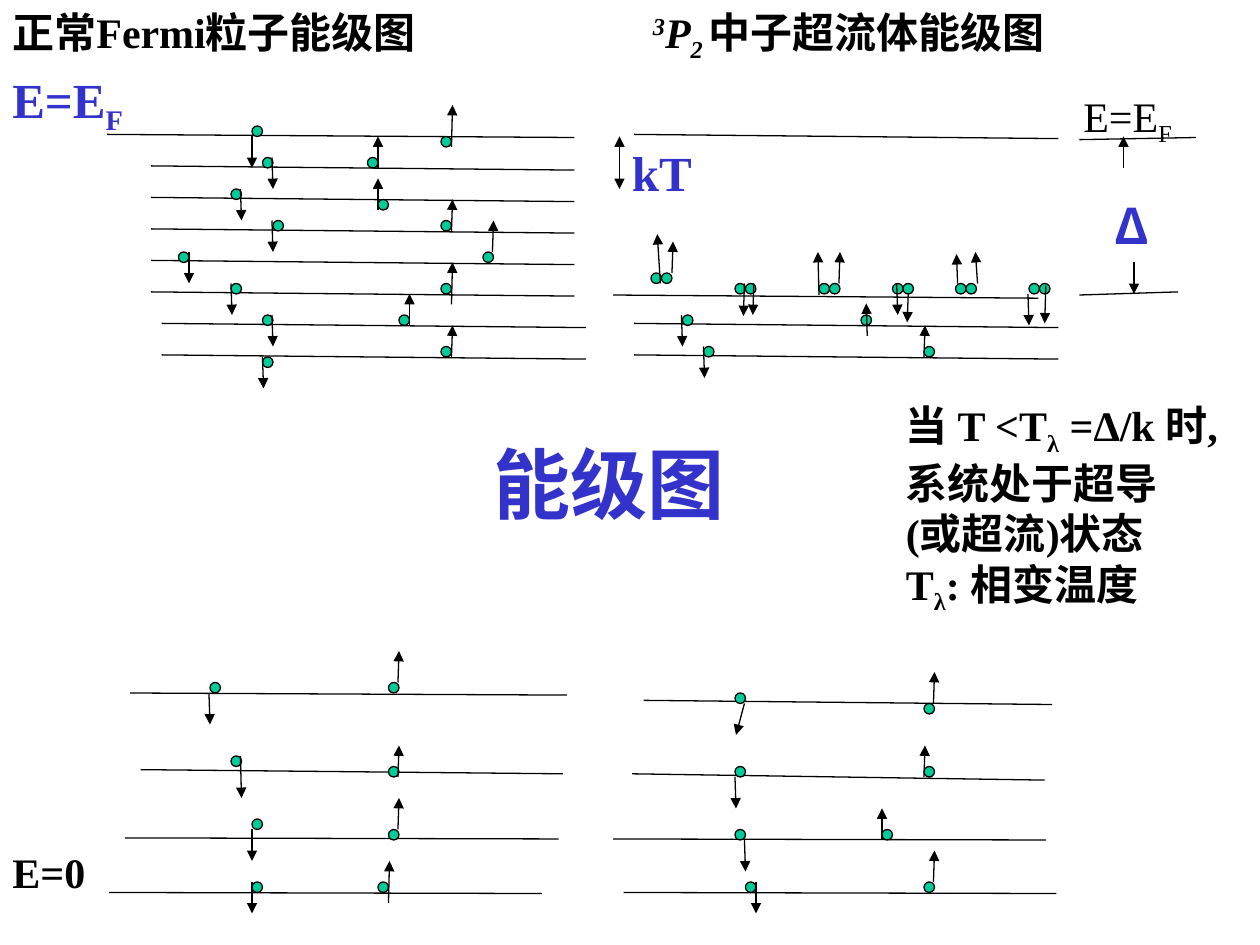
from lxml.etree import SubElement
from pptx import Presentation
from pptx.dml.color import RGBColor
from pptx.enum.shapes import MSO_CONNECTOR, MSO_SHAPE
from pptx.enum.text import MSO_ANCHOR, MSO_AUTO_SIZE, PP_ALIGN
from pptx.oxml.ns import qn
from pptx.util import Pt

PX = 7620  # EMU in one px, 120 px to the inch
DOT = 10
SERIF, SANS = "Times New Roman", "Noto Sans CJK SC"
BLACK, BLUE, GREEN = "000000", "3333CC", "00CC99"

# Energy levels: left x, left y, right x, right y
LEVELS = [
    (102, 128, 547, 131),
    *[(144, 158 + 30 * i, 547, 162 + 30 * i) for i in range(5)],
    (154, 308, 558, 312), (154, 338, 558, 342),
    (124, 660, 540, 662), (134, 733, 536, 737),
    (119, 798, 532, 799), (104, 850, 516, 851),
    (604, 128, 1008, 132), (584, 281, 989, 284),
    (604, 308, 1008, 312), (604, 338, 1008, 342),
    (613, 667, 1002, 671), (602, 737, 995, 743),
    (584, 799, 996, 800), (594, 850, 1006, 851),
    (1028, 133, 1139, 131), (1028, 281, 1122, 278),
]

# Particles: dot left, dot top, then the spin arrow's start and tip
NORMAL = [
    (240, 120, 240, 130, 240, 160), (420, 130, 430, 140, 431, 100),
    (250, 150, 259, 150, 260, 180), (350, 150, 360, 160, 360, 130),
    (220, 180, 229, 180, 230, 210), (360, 190, 360, 200, 360, 170),
    (260, 210, 259, 210, 260, 240), (420, 210, 430, 220, 431, 190),
    (170, 240, 180, 240, 180, 270), (460, 240, 469, 240, 470, 210),
    (220, 270, 220, 270, 221, 300), (420, 270, 430, 290, 431, 250),
    (250, 300, 259, 300, 260, 330), (380, 300, 390, 310, 390, 280),
    (250, 340, 250, 340, 251, 370), (420, 330, 430, 340, 431, 310),
    (200, 650, 199, 660, 200, 690), (370, 650, 379, 650, 380, 620),
    (220, 720, 229, 720, 230, 760), (370, 730, 379, 740, 380, 710),
    (240, 780, 240, 790, 240, 820), (370, 790, 379, 790, 380, 760),
    (240, 840, 240, 840, 240, 870), (360, 840, 370, 860, 371, 820),
]
SUPER = [
    (620, 260, 629, 270, 626, 223), (630, 260, 640, 260, 641, 230),
    (700, 270, 709, 270, 708, 301), (710, 270, 718, 270, 717, 300),
    (780, 270, 780, 281, 779, 240), (790, 270, 799, 270, 800, 240),
    (850, 270, 854, 270, 855, 300), (860, 270, 865, 280, 864, 307),
    (910, 270, 912, 270, 911, 242), (920, 270, 931, 270, 929, 240),
    (980, 270, 979, 280, 980, 310), (990, 270, 996, 272, 995, 308),
    (650, 300, 649, 300, 650, 330), (820, 300, 826, 320, 825, 289),
    (670, 330, 670, 330, 671, 360), (880, 330, 880, 340, 881, 310),
    (700, 660, 709, 670, 701, 700), (880, 670, 889, 670, 890, 640),
    (700, 730, 700, 740, 701, 770), (880, 730, 880, 740, 881, 710),
    (700, 790, 709, 800, 710, 830), (840, 790, 840, 800, 840, 770),
    (710, 840, 720, 840, 720, 870), (880, 840, 889, 840, 890, 810),
]
# Arrows marking the gap and the thermal energy
MARKS = [
    (1080, 250, 1080, 280), (1070, 160, 1070, 130),
    (590, 150, 590, 130), (590, 150, 590, 180),
]


def color(code):
    return RGBColor.from_string(code)


def px(*nums):
    return [n * PX for n in nums]


class Board:
    def __init__(self, slide):
        self.slide = slide
        self.shapes = slide.shapes

    def pen(self, line):
        line.color.rgb = color(BLACK)
        line.width = Pt(0.75)

    def line(self, ends, arrow=False):
        line = self.shapes.add_connector(MSO_CONNECTOR.STRAIGHT, *px(*ends))
        self.pen(line.line)
        if arrow:
            SubElement(line.line._get_or_add_ln(), qn("a:tailEnd"), type="triangle")
        SubElement(line._element.spPr, qn("a:effectLst"))

    def dot(self, x, y):
        dot = self.shapes.add_shape(MSO_SHAPE.OVAL, *px(x, y, DOT, DOT))
        dot.shadow.inherit = False
        dot.fill.solid()
        dot.fill.fore_color.rgb = color(GREEN)
        self.pen(dot.line)

    def put(self, para, runs, size, tint, bold=True, face=SERIF):
        """Fill a paragraph; a run is text or (text, baseline percent, italic)."""
        font = para.font
        font.size, font.bold, font.name = Pt(size), bold, face
        font.color.rgb = color(tint)
        SubElement(font._element, qn("a:ea"), typeface=SANS)
        for item in runs:
            text, base, slant = (item, 0, False) if isinstance(item, str) else item
            run = para.add_run()
            run.text = text
            if base:
                run._r.get_or_add_rPr().set("baseline", str(base * 1000))
            if slant:
                run.font.italic = True

    def title(self, box, text):
        title = self.shapes.title
        title.left, title.top, title.width, title.height = px(*box)
        title.text_frame.vertical_anchor = MSO_ANCHOR.MIDDLE
        para = title.text_frame.paragraphs[0]
        para.alignment = PP_ALIGN.CENTER
        self.put(para, [text], 44, BLUE, face=SANS)

    def label(self, box, runs, size=24, tint=BLACK, **style):
        frame = self.shapes.add_textbox(*px(*box)).text_frame
        frame.word_wrap = True
        para = frame.paragraphs[0]
        para.space_before = Pt(size * 0.2)
        self.put(para, runs, size, tint, **style)

    def note(self, box, rows):
        frame = self.shapes.add_textbox(*px(*box)).text_frame
        frame.word_wrap = False
        frame.auto_size = MSO_AUTO_SIZE.SHAPE_TO_FIT_TEXT
        for i, runs in enumerate(rows):
            para = frame.add_paragraph() if i else frame.paragraphs[0]
            self.put(para, runs, 24, BLACK)


def main():
    deck = Presentation()
    deck.slide_width, deck.slide_height = px(1200, 900)
    board = Board(deck.slides.add_slide(deck.slide_layouts[5]))

    board.title((430, 420, 300, 80), "能级图")
    for level in LEVELS:
        board.line(level)
    atoms = NORMAL + SUPER
    for x, y, *_ in atoms:
        board.dot(x, y)
    for ends in [atom[2:] for atom in atoms] + MARKS:
        board.line(ends, arrow=True)

    fermi = ["E=E", ("F", -25, False)]
    sub = ("λ", -25, False)
    board.label((0, 0, 460, 50), ["正常Fermi粒子能级图"])
    board.label((610, 0, 590, 60),
                [("3", 30, True), ("P", 0, True), ("2 ", -25, True), "中子超流体能级图"])
    board.label((0, 60, 170, 60), fermi, 28, BLUE)
    board.label((1020, 80, 120, 60), fermi, bold=False)
    board.label((590, 130, 110, 50), ["kT"], 28, BLUE)
    board.label((1050, 180, 60, 60), ["Δ"], 28, BLUE, face=SANS)
    board.label((0, 800, 100, 50), ["E=0"])
    board.note((851, 375, 349, 254), [
        ["当 T <T", sub, " =Δ/k 时,"],
        ["系统处于超导"],
        ["(或超流)状态"],
        ["T", sub, ": 相变温度"],
    ])
    deck.save("out.pptx")


if __name__ == "__main__":
    main()
